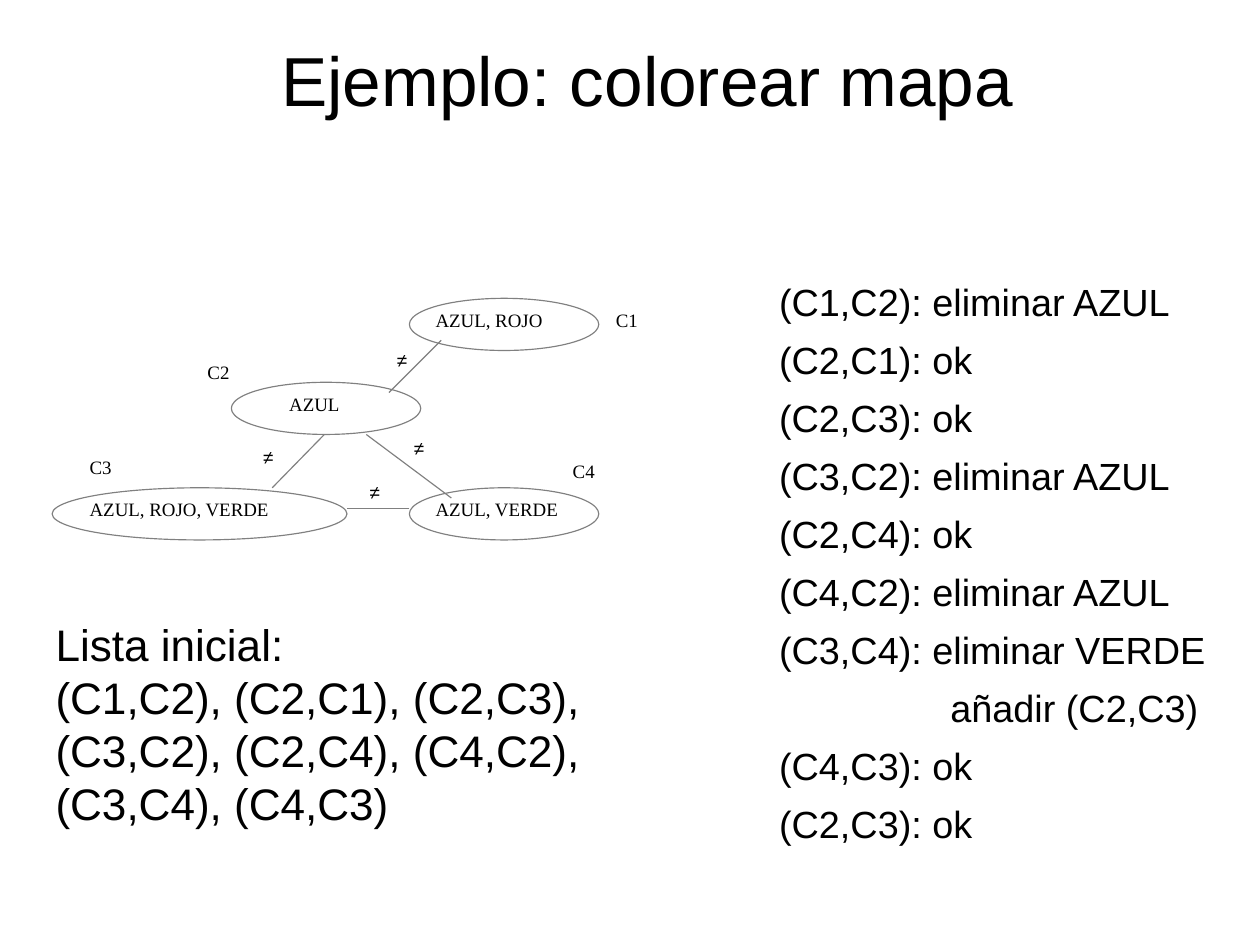
from pptx import Presentation
from pptx.dml.color import RGBColor
from pptx.enum.shapes import MSO_CONNECTOR, MSO_SHAPE
from pptx.enum.text import MSO_ANCHOR, MSO_AUTO_SIZE as AUTO, PP_ALIGN
from pptx.oxml.ns import qn
from pptx.util import Pt
from lxml.etree import SubElement

PX = 9144
BLACK = RGBColor(0x00, 0x00, 0x00)
GRAY = RGBColor(0x80, 0x80, 0x80)
SANS, SERIF = "Arial", "Times New Roman"
WIDE_INSETS = (6, 6, 15, 6)
TIGHT_INSETS = (0, 0, 5, 0)


def write(frame, text, size, font, insets, margin=5, hanging=0):
    frame.text = text
    (frame.margin_left, frame.margin_top,
     frame.margin_right, frame.margin_bottom) = [side * PX for side in insets]
    for paragraph in frame.paragraphs:
        properties = paragraph._p.get_or_add_pPr()
        properties.set("marL", str(margin * PX))
        properties.set("indent", str(-hanging * PX))
        for run in paragraph.runs:
            run.font.size = Pt(size)
            run.font.name = font
            run.font.color.rgb = BLACK


def add_text(box, text, size, font, insets, margin=5, hanging=0):
    frame = slide.shapes.add_textbox(*[length * PX for length in box]).text_frame
    write(frame, text, size, font, insets, margin, hanging)
    frame.word_wrap = True
    return frame


prs = Presentation()
prs.slide_width, prs.slide_height = 1111 * PX, 833 * PX
slide = prs.slides.add_slide(prs.slide_layouts[5])

title = slide.shapes.title
title.left, title.top, title.width, title.height = 101 * PX, 0, 944 * PX, 139 * PX
write(title.text_frame, "Ejemplo: colorear mapa", 44, SANS, WIDE_INSETS)
title.text_frame.vertical_anchor = MSO_ANCHOR.MIDDLE
title.text_frame.paragraphs[0].alignment = PP_ALIGN.CENTER

steps = [
    "(C1,C2): eliminar AZUL",
    "(C2,C1): ok",
    "(C2,C3): ok",
    "(C3,C2): eliminar AZUL",
    "(C2,C4): ok",
    "(C4,C2): eliminar AZUL",
    "(C3,C4): eliminar VERDE",
    "añadir (C2,C3)",
    "(C4,C3): ok",
    "(C2,C3): ok",
]
trace = add_text((676, 240, 435, 593), "\n".join(steps), 24, SANS, WIDE_INSETS, 47, 42)
for number, step in enumerate(trace.paragraphs):
    step.line_spacing = Pt(28.8)
    step.space_before = Pt(8 if number else 0)
    if step.text.startswith("añadir"):
        step._p.pPr.set("marL", str(156 * PX))
        step._p.pPr.set("indent", "0")

for left, top, width in [(361, 263, 167), (204, 337, 167), (46, 430, 260), (361, 430, 167)]:
    region = slide.shapes.add_shape(
        MSO_SHAPE.OVAL, left * PX, top * PX, width * PX, 46 * PX)
    region.shadow.inherit = False
    region.fill.background()
    region.line.color.rgb = GRAY
    region.line.width = Pt(0.75)

for ends in [(389, 300, 343, 346), (286, 383, 240, 430),
             (323, 383, 398, 439), (361, 448, 306, 448)]:
    border = slide.shapes.add_connector(
        MSO_CONNECTOR.STRAIGHT, *[length * PX for length in ends])
    border.line.color.rgb = GRAY
    border.line.width = Pt(0.75)
    SubElement(border._element.spPr, qn("a:effectLst"))

labels = [
    ("C1", 538, 272, 30, SERIF),
    ("C2", 178, 318, 30, SERIF),
    ("C3", 74, 402, 30, SERIF),
    ("C4", 500, 405, 30, SERIF),
    ("AZUL, ROJO", 379, 272, 105, SERIF),
    ("AZUL", 250, 346, 55, SERIF),
    ("AZUL, ROJO, VERDE", 74, 439, 169, SERIF),
    ("AZUL, VERDE", 379, 439, 119, SERIF),
    ("≠", 345, 307, 19, SANS),
    ("≠", 227, 393, 19, SANS),
    ("≠", 360, 385, 19, SANS),
    ("≠", 321, 424, 19, SANS),
]
for text, left, top, width, font in labels:
    label = add_text((left, top, width, 20), text, 12, font, TIGHT_INSETS)
    label.word_wrap = False
    label.auto_size = AUTO.SHAPE_TO_FIT_TEXT

arcs = "(C1,C2), (C2,C1), (C2,C3), (C3,C2), (C2,C4), (C4,C2), (C3,C4), (C4,C3)"
initial_list = add_text(
    (44, 544, 620, 188), "Lista inicial:\n" + arcs, 28, SANS, TIGHT_INSETS)
initial_list.auto_size = AUTO.SHAPE_TO_FIT_TEXT
for paragraph in initial_list.paragraphs:
    paragraph.line_spacing = Pt(33.6)

prs.save("out.pptx")
